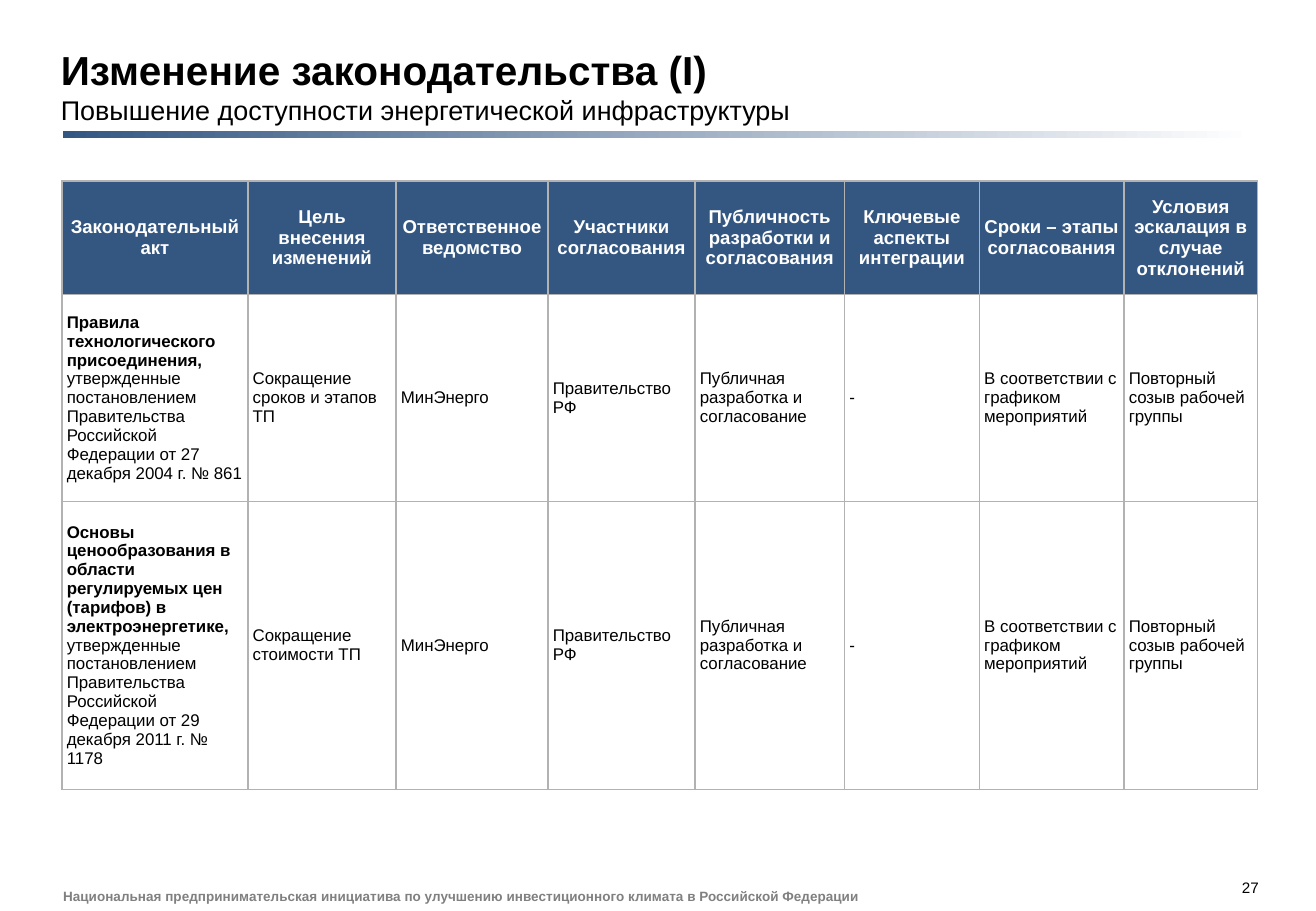
from collections import namedtuple

from lxml.etree import SubElement
from pptx import Presentation
from pptx.dml.color import RGBColor
from pptx.enum.shapes import MSO_SHAPE
from pptx.enum.text import MSO_ANCHOR, PP_ALIGN
from pptx.oxml.ns import qn
from pptx.util import Inches, Pt

NAVY = RGBColor(0x34, 0x57, 0x82)
WHITE = RGBColor(0xFF, 0xFF, 0xFF)
BLACK = RGBColor(0, 0, 0)
GRAY = RGBColor(0x80, 0x80, 0x80)
BORDER = RGBColor(0xB2, 0xB2, 0xB2)

WIDTH, HEIGHT = Inches(10.83), Inches(7.5)
Box = namedtuple("Box", "left top width height")

COLUMN_SHARES = [1.53, 1.22, 1.25, 1.21, 1.23, 1.11, 1.19, 1.1]
ROW_SHARES = [0.93, 1.7, 2.37]
HEADINGS = [
    "Законодательный акт", "Цель внесения изменений", "Ответственное ведомство",
    "Участники согласования", "Публичность разработки и согласования",
    "Ключевые аспекты интеграции", "Сроки – этапы согласования",
    "Условия эскалация в случае отклонений",
]
COMMON = [
    "МинЭнерго", "Правительство РФ", "Публичная разработка и согласование", "-",
    "В соответствии с графиком мероприятий", "Повторный созыв рабочей группы",
]
ACTS = [
    ("Правила технологического присоединения,",
     " утвержденные постановлением Правительства Российской Федерации от 27 декабря 2004 г. № 861",
     "Сокращение сроков и этапов ТП"),
    ("Основы ценообразования в области регулируемых цен (тарифов) в электроэнергетике,",
     " утвержденные постановлением Правительства Российской Федерации от 29 декабря 2011 г. № 1178",
     "Сокращение стоимости ТП"),
]


def percent_box(left, top, width, height):
    return Box(round(WIDTH * left / 100), round(HEIGHT * top / 100),
               round(WIDTH * width / 100), round(HEIGHT * height / 100))


def style(font, size, color=BLACK, bold=False):
    font.name = "Arial"
    font.size = Pt(size)
    font.bold = bold
    font.color.rgb = color


def add_text(page, box, anchor, wrap, inset=0):
    frame = page.shapes.add_textbox(*box).text_frame
    frame.word_wrap = wrap
    frame.vertical_anchor = anchor
    frame.margin_left = frame.margin_right = 0
    frame.margin_top = frame.margin_bottom = Inches(inset)
    return frame.paragraphs[0]


def add_title(page, box):
    para = add_text(page, box, MSO_ANCHOR.BOTTOM, True, 0.05)
    heading = para.add_run()
    heading.text = "Изменение законодательства (I)"
    style(heading.font, 24, bold=True)
    para.add_line_break()
    subtitle = para.add_run()
    subtitle.text = "Повышение доступности энергетической инфраструктуры"
    style(subtitle.font, 16)


def add_rule(page, box):
    rule = page.shapes.add_shape(MSO_SHAPE.RECTANGLE, *box)
    rule.shadow.inherit = False
    rule.line.fill.background()
    rule.fill.gradient()
    rule.fill.gradient_angle = 0
    for stop, color, position in zip(rule.fill.gradient_stops, (NAVY, WHITE), (0, 1)):
        stop.color.rgb = color
        stop.position = position


def format_cell(cell, fill):
    properties = cell._tc.get_or_add_tcPr()
    for side in ("lnL", "lnR", "lnT", "lnB"):
        line = SubElement(properties, qn(f"a:{side}"), w=str(Pt(1)))
        solid = SubElement(line, qn("a:solidFill"))
        SubElement(solid, qn("a:srgbClr"), val=str(BORDER))
    cell.fill.solid()
    cell.fill.fore_color.rgb = fill
    cell.vertical_anchor = MSO_ANCHOR.MIDDLE
    cell.margin_left = cell.margin_right = Inches(0.04)
    cell.margin_top = cell.margin_bottom = Inches(0.1)


def add_law_table(page, box):
    rows = [HEADINGS] + [[(name, detail), goal] + COMMON for name, detail, goal in ACTS]
    table = page.shapes.add_table(len(rows), len(HEADINGS), *box).table
    for column, share in zip(table.columns, COLUMN_SHARES):
        column.width = round(box.width * share / sum(COLUMN_SHARES))
    for row, share in zip(table.rows, ROW_SHARES):
        row.height = round(box.height * share / sum(ROW_SHARES))
    for row_index, texts in enumerate(rows):
        is_header = row_index == 0
        for column_index, text in enumerate(texts):
            cell = table.cell(row_index, column_index)
            format_cell(cell, NAVY if is_header else WHITE)
            para = cell.text_frame.paragraphs[0]
            if is_header:
                para.alignment = PP_ALIGN.CENTER
            parts = text if isinstance(text, tuple) else (text,)
            for part_index, part in enumerate(parts):
                span = para.add_run()
                span.text = part
                is_act_name = len(parts) > 1 and part_index == 0
                style(span.font, 11 if is_header else 10,
                      WHITE if is_header else BLACK, is_header or is_act_name)


def add_footer(page, note_box, number_box):
    note = add_text(page, note_box, MSO_ANCHOR.MIDDLE, False)
    note.text = ("Национальная предпринимательская инициатива по улучшению "
                 "инвестиционного климата в Российской Федерации")
    style(note.font, 8, GRAY, True)
    number = add_text(page, number_box, MSO_ANCHOR.TOP, False)
    number.text = "27"
    number.alignment = PP_ALIGN.RIGHT
    style(number.font, 9)


def main():
    deck = Presentation()
    deck.slide_width, deck.slide_height = WIDTH, HEIGHT
    page = deck.slides.add_slide(deck.slide_layouts[6])
    add_rule(page, percent_box(4.8, 14.4, 90.5, 0.8))
    add_footer(page, percent_box(4.8, 97.47, 61.03, 1.73),
               percent_box(93.72, 96.4, 1.94, 1.87))
    add_law_table(page, percent_box(4.71, 19.87, 90.86, 66.67))
    add_title(page, percent_box(4.62, 2.4, 90.77, 12.13))
    deck.save("out.pptx")


if __name__ == "__main__":
    main()
